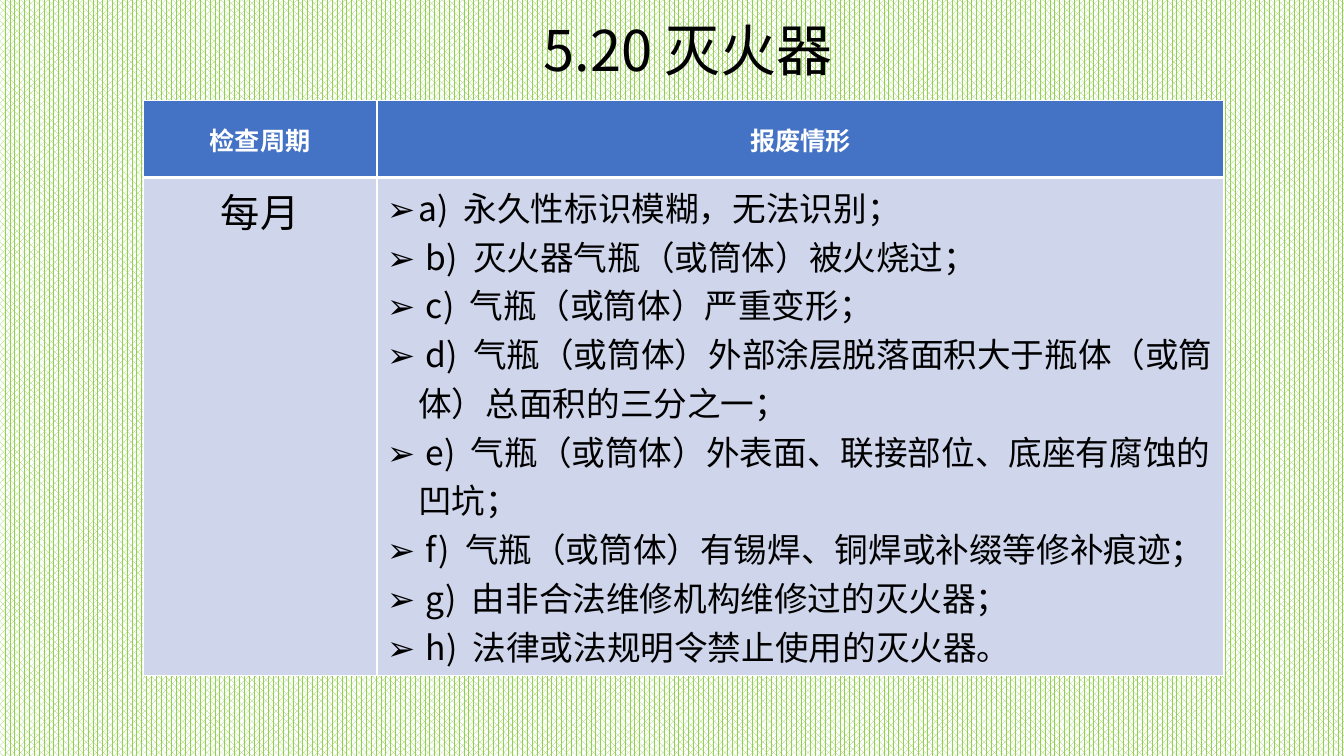
from lxml.etree import SubElement
from pptx import Presentation
from pptx.dml.color import RGBColor
from pptx.enum.dml import MSO_PATTERN
from pptx.enum.text import MSO_ANCHOR, PP_ALIGN
from pptx.oxml.ns import qn
from pptx.util import Inches, Pt

FONT = "Noto Sans CJK SC"
COLORS = {
    "stripe": "92D050",
    "white": "FFFFFF",
    "black": "000000",
    "header": "4472C4",
    "body": "CFD5EA",
}
HEADERS = ["检查周期", "报废情形"]
PERIOD = "每月"
SCRAP_CONDITIONS = [
    "a)  永久性标识模糊，无法识别；",
    " b)  灭火器气瓶（或筒体）被火烧过；",
    " c)  气瓶（或筒体）严重变形；",
    " d)  气瓶（或筒体）外部涂层脱落面积大于瓶体（或筒体）总面积的三分之一；",
    " e)  气瓶（或筒体）外表面、联接部位、底座有腐蚀的凹坑；",
    " f)  气瓶（或筒体）有锡焊、铜焊或补缀等修补痕迹；",
    " g)  由非合法维修机构维修过的灭火器；",
    " h)  法律或法规明令禁止使用的灭火器。",
]


def color(key):
    """Return the named colour."""
    return RGBColor.from_string(COLORS[key])


def write(paragraph, text, size, ink="black", bold=False, align=PP_ALIGN.CENTER):
    """Put formatted text into a paragraph."""
    paragraph.alignment = align
    run = paragraph.add_run()
    run.text = text
    run.font.size = Pt(size)
    run.font.bold = bold
    run.font.name = FONT
    run.font.color.rgb = color(ink)
    SubElement(run.font._element, qn("a:ea"), typeface=FONT)


def add_bullet(paragraph, indent=0.31):
    """Give a paragraph an arrow bullet with a hanging indent."""
    properties = paragraph._p.get_or_add_pPr()
    properties.set("marL", str(Inches(indent)))
    properties.set("indent", str(-Inches(indent)))
    SubElement(properties, qn("a:buFont"), typeface=FONT)
    SubElement(properties, qn("a:buChar"), char="➢")


def style_cell(cell, fill, top=1, bottom=1):
    """Draw a cell's white borders and fill it."""
    properties = cell._tc.get_or_add_tcPr()
    for side, width in {"L": 1, "R": 1, "T": top, "B": bottom}.items():
        border = SubElement(properties, qn(f"a:ln{side}"), w=str(Pt(width)))
        border_fill = SubElement(border, qn("a:solidFill"))
        SubElement(border_fill, qn("a:srgbClr"), val=COLORS["white"])
    cell.fill.solid()
    cell.fill.fore_color.rgb = color(fill)


def add_background(slide):
    """Cover the slide with the green pattern."""
    fill = slide.background.fill
    fill.patterned()
    fill.pattern = MSO_PATTERN.PERCENT_70
    fill.fore_color.rgb = color("stripe")
    fill.back_color.rgb = color("white")


def add_title(slide, left, top, width, height):
    """Place the centred heading at the top of its box."""
    frame = slide.shapes.add_textbox(
        Inches(left), Inches(top), Inches(width), Inches(height)
    ).text_frame
    frame.word_wrap = True
    frame.vertical_anchor = MSO_ANCHOR.TOP
    frame.margin_top = 0
    heading = frame.paragraphs[0]
    heading.line_spacing = 0.9
    heading.space_after = Pt(14)
    write(heading, "5.20 灭火器", 40)


def add_inspection_table(slide, left, top, width, height):
    """Place the table of inspection period and scrap conditions."""
    table = slide.shapes.add_table(
        2, 2, Inches(left), Inches(top), Inches(width), Inches(height)
    ).table
    period_width, header_height = 2.32, 0.76
    table.columns[0].width = Inches(period_width)
    table.columns[1].width = Inches(width - period_width)
    table.rows[0].height = Inches(header_height)
    table.rows[1].height = Inches(height - header_height)

    for column, header in enumerate(HEADERS):
        header_cell = table.cell(0, column)
        style_cell(header_cell, "header", bottom=3)
        header_cell.vertical_anchor = MSO_ANCHOR.MIDDLE
        write(header_cell.text_frame.paragraphs[0], header, 18, ink="white", bold=True)
        style_cell(table.cell(1, column), "body", top=3)

    write(table.cell(1, 0).text_frame.paragraphs[0], PERIOD, 28)
    conditions = table.cell(1, 1).text_frame
    for index, condition in enumerate(SCRAP_CONDITIONS):
        paragraph = conditions.add_paragraph() if index else conditions.paragraphs[0]
        write(paragraph, condition, 24, align=PP_ALIGN.LEFT)
        add_bullet(paragraph)


def main():
    """Build the slide and save it."""
    deck = Presentation()
    deck.slide_width, deck.slide_height = Inches(13.33), Inches(7.5)
    slide = deck.slides.add_slide(deck.slide_layouts[6])
    add_background(slide)
    add_title(slide, 1.29, 0.23, 11.07, 0.94)
    add_inspection_table(slide, 1.42, 1, 10.72, 5.7)
    deck.save("out.pptx")


if __name__ == "__main__":
    main()
